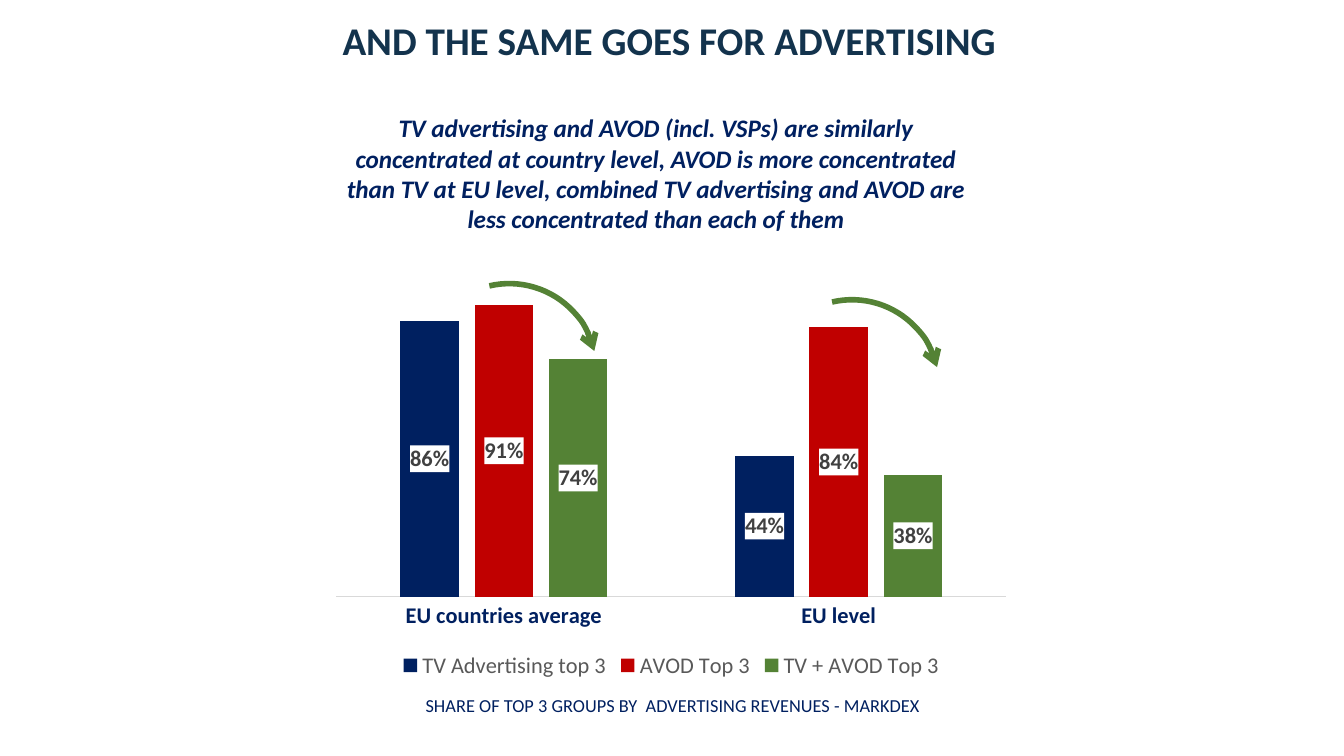
from lxml import etree
from pptx import Presentation
from pptx import util as u
from pptx.chart.data import CategoryChartData
from pptx.dml.color import RGBColor
from pptx.enum import chart as charts, shapes, text
from pptx.oxml import parse_xml
from pptx.oxml.ns import nsdecls, qn

NAVY, RED, GREEN, GREY = "002060", "C00000", "548235", "595959"

heading = "AND THE SAME GOES FOR ADVERTISING"
message = (
    "TV advertising and AVOD (incl. VSPs) are similarly concentrated at country level, "
    "AVOD is more concentrated than TV at EU level, combined TV advertising and AVOD "
    "are less concentrated than each of them"
)
source = "SHARE OF TOP 3 GROUPS BY  ADVERTISING REVENUES - MARKDEX"
regions = ["EU countries average", "EU level"]
shares = [
    ("TV Advertising top 3", (0.86, 0.44), NAVY),
    ("AVOD Top 3", (0.91, 0.84), RED),
    ("TV + AVOD Top 3", (0.74, 0.38), GREEN),
]
drops = [(5.69, 2.23), (3.14, 2.11)]


def rgb(value):
    return RGBColor.from_string(value)


def style(font, size, color, bold=False, italic=False):
    font.name = "Calibri"
    font.size = u.Pt(size)
    font.color.rgb = rgb(color)
    font.bold = bold
    font.italic = italic


def inches(*lengths):
    return [u.Inches(length) for length in lengths]


def write(box, wording, size, color, bold=False, italic=False):
    frame = box.text_frame
    frame.word_wrap = True
    frame.text = wording
    line = frame.paragraphs[0]
    line.alignment = text.PP_ALIGN.CENTER
    style(line.runs[0].font, size, color, bold, italic)
    return frame


def add_shares_chart(slide):
    data = CategoryChartData(number_format="0%")
    data.categories = regions
    for name, values, _ in shares:
        data.add_series(name, values)
    chart = slide.shapes.add_chart(
        charts.XL_CHART_TYPE.COLUMN_CLUSTERED, *inches(2.4, 1.99, 5.19, 3.1), data
    ).chart
    style(chart.font, 12, "000000")
    chart.has_title = False
    chart.has_legend = True
    chart.legend.position = charts.XL_LEGEND_POSITION.BOTTOM
    chart.legend.include_in_layout = False
    style(chart.legend.font, 12, GREY)

    region_axis = chart.category_axis
    region_axis.major_tick_mark = charts.XL_TICK_MARK.NONE
    region_axis.format.line.color.rgb = rgb("D9D9D9")
    region_axis.format.line.width = u.Pt(0.75)
    style(region_axis.tick_labels.font, 12, NAVY, bold=True)
    share_axis = chart.value_axis
    share_axis.minimum_scale = 0
    share_axis.maximum_scale = 1
    share_axis.has_major_gridlines = False
    share_axis.visible = False

    plot = chart.plots[0]
    plot.gap_width = 219
    plot.overlap = -27
    plot.vary_by_categories = False
    for series, (_, _, color) in zip(plot.series, shares):
        series.format.fill.solid()
        series.format.fill.fore_color.rgb = rgb(color)
        labels = series.data_labels
        labels.show_value = True
        labels.number_format = "0%"
        labels.number_format_is_linked = False
        labels.position = charts.XL_LABEL_POSITION.CENTER
        style(labels.font, 12, "404040", bold=True)
        label_fill = parse_xml(
            f'<c:spPr {nsdecls("c", "a")}><a:solidFill>'
            '<a:srgbClr val="FFFFFF"/></a:solidFill></c:spPr>'
        )
        series._element.find(qn("c:dLbls")).find(qn("c:numFmt")).addnext(label_fill)


def add_drop_arrow(slide, left, top):
    arrow = slide.shapes.add_shape(
        shapes.MSO_SHAPE.ARC, *inches(left, top, 1.3, 1.3)
    )
    arrow.rotation = 346.8
    arrow.shadow.inherit = False
    arrow.fill.background()
    arrow.line.color.rgb = rgb(GREEN)
    arrow.line.width = u.Pt(3)
    etree.SubElement(arrow.line._get_or_add_ln(), qn("a:tailEnd"), type="arrow")


def main():
    deck = Presentation()
    deck.slide_width = u.Inches(10)
    deck.slide_height = u.Inches(10 * 9 / 16)
    slide = deck.slides.add_slide(deck.slide_layouts[5])

    title = slide.shapes.title
    title.left, title.top, title.width, title.height = inches(0.63, 0.07, 8.7, 0.45)
    write(title, heading, 21, "13334D", bold=True)

    add_shares_chart(slide)
    for left, top in drops:
        add_drop_arrow(slide, left, top)

    caption = slide.shapes.add_textbox(*inches(0.97, 5.1, 8.07, 0.3))
    frame = write(caption, source, 9.8, NAVY)
    frame.vertical_anchor = text.MSO_ANCHOR.MIDDLE
    frame.margin_left = frame.margin_right = u.Inches(0.02)
    frame.margin_top = frame.margin_bottom = u.Inches(0.02)

    summary = slide.shapes.add_textbox(*inches(2.4, 0.79, 4.96, 1.01))
    frame = write(summary, message, 13.5, NAVY, bold=True, italic=True)
    frame.auto_size = text.MSO_AUTO_SIZE.SHAPE_TO_FIT_TEXT

    deck.save("out.pptx")


if __name__ == "__main__":
    main()
